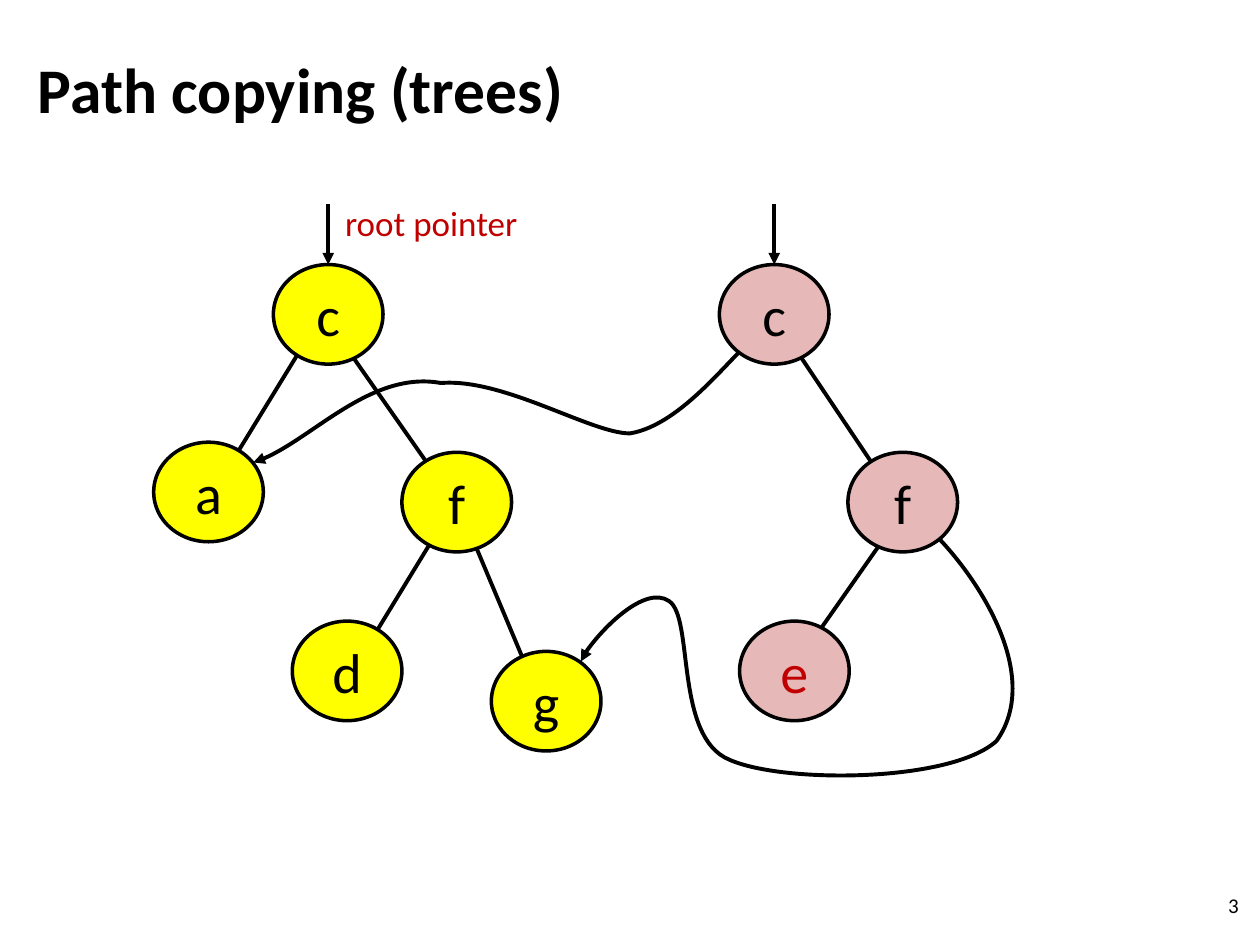
from dataclasses import dataclass

from lxml import etree
from pptx import Presentation
from pptx import util as u
from pptx.dml.color import RGBColor
from pptx.enum import shapes, text
from pptx.oxml import ns


@dataclass(frozen=True)
class Theme:
    font: str = "Calibri"
    black: str = "000000"
    red: str = "C00000"
    old_node: str = "FFFF00"
    new_node: str = "E6B9B8"
    title_size: float = 36.3
    node_size: float = 32
    label_size: float = 20
    number_size: float = 12
    edge_width: float = 2.25
    outline_width: float = 2


THEME = Theme()
NODE_WIDTH, NODE_HEIGHT = 0.87, 0.79

OLD_NODES = [("c", 2.17, 2.1), ("a", 1.22, 3.51), ("f", 3.19, 3.59),
             ("d", 2.32, 4.93), ("g", 3.9, 5.17)]
NEW_NODES = [("c", 5.71, 2.1), ("f", 6.73, 3.59), ("e", 5.87, 4.93)]

EDGES = [((6.91, 3.66), (6.34, 2.81)), ((6.5, 5.01), (6.97, 4.34)),
         ((1.69, 3.91), (2.56, 2.49)), ((4.29, 5.56), (3.66, 4.06)),
         ((3.66, 4.06), (2.56, 2.49)), ((2.8, 5.32), (3.66, 3.91))]

SHARED_A = [(6.02, 2.65), (5.81, 2.81), (5.42, 3.37), (5, 3.44),
            (4.69, 3.44), (4, 3), (3.5, 3.04),
            (2.95, 2.94), (2.43, 3.54), (2.01, 3.67)]
SHARED_G = [(7.31, 4.14), (7.63, 4.4), (8.32, 5.3), (7.91, 5.88),
            (7.55, 6.21), (6.22, 6.22), (5.79, 6.03),
            (5.35, 5.85), (5.51, 4.9), (5.31, 4.77),
            (5.12, 4.64), (4.66, 5.1), (4.61, 5.25)]


def write(shape, words, size, color=THEME.black, bold=False,
          align=text.PP_ALIGN.LEFT, anchor=text.MSO_ANCHOR.MIDDLE, spacing=None):
    frame = shape.text_frame
    frame.word_wrap = True
    frame.vertical_anchor = anchor
    para = frame.paragraphs[0]
    para.alignment = align
    para.line_spacing = spacing
    span = para.add_run()
    span.text = words
    span.font.name = THEME.font
    span.font.size = u.Pt(size)
    span.font.bold = bold
    span.font.color.rgb = RGBColor.from_string(color)


def place(shape, left, top, width, height):
    shape.left, shape.top = u.Inches(left), u.Inches(top)
    shape.width, shape.height = u.Inches(width), u.Inches(height)


def add_label(page, words, box, size, **style):
    label = page.shapes.add_textbox(*map(u.Inches, box))
    write(label, words, size, **style)


def style_line(shape, width, arrow=False):
    shape.line.color.rgb = RGBColor.from_string(THEME.black)
    shape.line.width = u.Pt(width)
    if arrow:
        line = shape.line._get_or_add_ln()
        etree.SubElement(line, ns.qn("a:tailEnd"), type="triangle")


def add_edge(page, start, end, arrow=False):
    edge = page.shapes.add_connector(
        shapes.MSO_CONNECTOR.STRAIGHT, *map(u.Inches, (*start, *end)))
    style_line(edge, THEME.edge_width, arrow)
    etree.SubElement(edge._element.spPr, ns.qn("a:effectLst"))
    return edge


def add_curve(page, points):
    start, *rest = [(u.Inches(x), u.Inches(y)) for x, y in points]
    builder = page.shapes.build_freeform(*start)
    builder.add_line_segments(rest, close=False)
    curve = builder.convert_to_shape()
    segments = list(curve._element.iter(ns.qn("a:lnTo")))
    for first in range(0, len(segments), 3):
        group = segments[first:first + 3]
        bezier = etree.Element(ns.qn("a:cubicBezTo"))
        group[0].addprevious(bezier)
        for segment in group:
            bezier.append(segment[0])
            segment.getparent().remove(segment)
    curve.fill.background()
    curve.shadow.inherit = False
    style_line(curve, THEME.edge_width, arrow=True)


def add_node(page, name, left, top, fill, color=THEME.black):
    box = map(u.Inches, (left, top, NODE_WIDTH, NODE_HEIGHT))
    node = page.shapes.add_shape(shapes.MSO_SHAPE.OVAL, *box)
    node.shadow.inherit = False
    node.fill.solid()
    node.fill.fore_color.rgb = RGBColor.from_string(fill)
    style_line(node, THEME.outline_width)
    write(node, name, THEME.node_size, color=color, align=text.PP_ALIGN.CENTER)
    return node


def add_root_pointer(page, root):
    x = root.left.inches + NODE_WIDTH / 2
    pointer = add_edge(page, (x, 1.62), (x, root.top.inches), arrow=True)
    pointer.end_connect(root, 0)


def main():
    deck = Presentation()
    deck.slide_width, deck.slide_height = u.Inches(10), u.Inches(7.5)
    page = deck.slides.add_slide(deck.slide_layouts[5])

    title = page.shapes.title
    place(title, 0.2, 0.44, 9, 0.63)
    write(title, "Path copying (trees)", THEME.title_size, bold=True, spacing=0.8)

    for points in (SHARED_A, SHARED_G):
        add_curve(page, points)
    for start, end in EDGES:
        add_edge(page, start, end)

    old_tree = [add_node(page, *node, THEME.old_node) for node in OLD_NODES]
    new_tree = [add_node(page, *node, THEME.new_node,
                         color=THEME.red if node[0] == "e" else THEME.black)
                for node in NEW_NODES]
    for tree in (old_tree, new_tree):
        add_root_pointer(page, tree[0])

    add_label(page, "root pointer", (2.64, 1.55, 2.48, 0.44), THEME.label_size,
              color=THEME.red, anchor=text.MSO_ANCHOR.TOP)
    add_label(page, "3", (7.6, 6.98, 2.33, 0.4), THEME.number_size,
              align=text.PP_ALIGN.RIGHT)
    deck.save("out.pptx")


if __name__ == "__main__":
    main()
